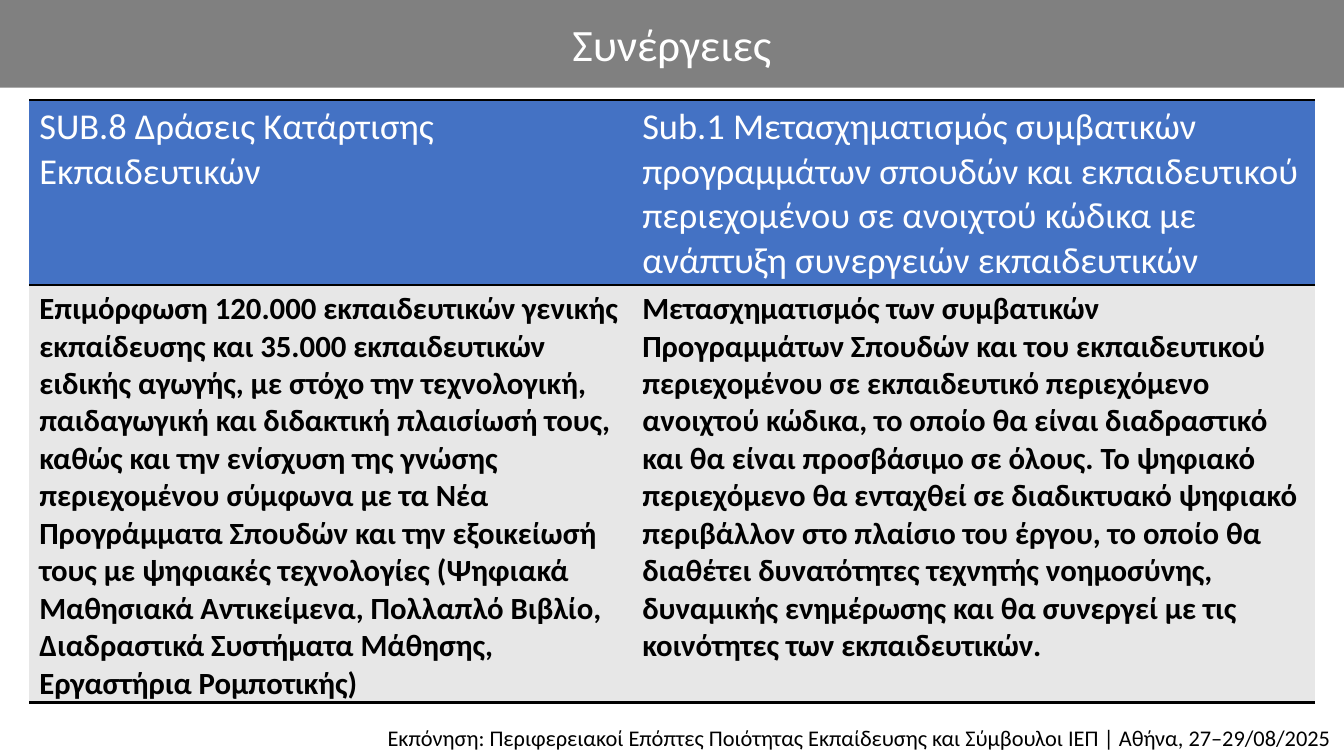
from lxml import etree
from pptx import Presentation
from pptx.dml.color import RGBColor
from pptx.enum.text import MSO_ANCHOR, MSO_AUTO_SIZE, PP_ALIGN
from pptx.oxml.ns import qn
from pptx.util import Inches, Pt

MIDDLE, TOP = MSO_ANCHOR.MIDDLE, MSO_ANCHOR.TOP
CENTER, LEFT, RIGHT = PP_ALIGN.CENTER, PP_ALIGN.LEFT, PP_ALIGN.RIGHT
FIXED = MSO_AUTO_SIZE.NONE
FONT = "Calibri"
COLORS = {
    "band": "808080",
    "header": "4472C4",
    "body": "E7E7E7",
    "white": "FFFFFF",
    "black": "000000",
}


def write(frame, text, size, color, align, bold=False):
    frame.text = text
    frame.word_wrap = True
    para = frame.paragraphs[0]
    para.alignment = align
    for span in para.runs:
        span.font.name = FONT
        span.font.size = Pt(size)
        span.font.bold = bold
        span.font.color.rgb = RGBColor.from_string(COLORS[color])


def set_border(cell, side, points):
    line = etree.Element(qn(f"a:{side}"), w=str(Pt(points)))
    if points:
        fill = etree.SubElement(line, qn("a:solidFill"))
        etree.SubElement(fill, qn("a:srgbClr"), val=COLORS["black"])
    else:
        etree.SubElement(line, qn("a:noFill"))
    properties = cell._tc.get_or_add_tcPr()
    fill_index = next(i for i, item in enumerate(properties) if item.tag == qn("a:solidFill"))
    properties.insert(fill_index, line)


deck = Presentation()
deck.slide_width = Inches(13.33)
deck.slide_height = Inches(7.5)
page = deck.slides.add_slide(deck.slide_layouts[5])

title = page.shapes.title
title.left, title.top = Inches(0), Inches(0)
title.width, title.height = deck.slide_width, Inches(0.87)
title.fill.solid()
title.fill.fore_color.rgb = RGBColor.from_string(COLORS["band"])
write(title.text_frame, "Συνέργειες", 32, "white", CENTER)
title.text_frame.auto_size = FIXED
title.text_frame.vertical_anchor = MIDDLE

synergies = [
    (
        "SUB.8 Δράσεις Κατάρτισης Εκπαιδευτικών",
        "Sub.1 Μετασχηματισμός συμβατικών προγραμμάτων σπουδών και εκπαιδευτικού "
        "περιεχομένου σε ανοιχτού κώδικα με ανάπτυξη συνεργειών εκπαιδευτικών",
    ),
    (
        "Επιμόρφωση 120.000 εκπαιδευτικών γενικής εκπαίδευσης και 35.000 εκπαιδευτικών "
        "ειδικής αγωγής, με στόχο την τεχνολογική, παιδαγωγική και διδακτική πλαισίωσή "
        "τους, καθώς και την ενίσχυση της γνώσης περιεχομένου σύμφωνα με τα Νέα "
        "Προγράμματα Σπουδών και την εξοικείωσή τους με ψηφιακές τεχνολογίες (Ψηφιακά "
        "Μαθησιακά Αντικείμενα, Πολλαπλό Βιβλίο, Διαδραστικά Συστήματα Μάθησης, "
        "Εργαστήρια Ρομποτικής)",
        "Μετασχηματισμός των συμβατικών Προγραμμάτων Σπουδών και του εκπαιδευτικού "
        "περιεχομένου σε εκπαιδευτικό περιεχόμενο ανοιχτού κώδικα, το οποίο θα είναι "
        "διαδραστικό και θα είναι προσβάσιμο σε όλους. Το ψηφιακό περιεχόμενο θα "
        "ενταχθεί σε διαδικτυακό ψηφιακό περιβάλλον στο πλαίσιο του έργου, το οποίο θα "
        "διαθέτει δυνατότητες τεχνητής νοημοσύνης, δυναμικής ενημέρωσης και θα "
        "συνεργεί με τις κοινότητες των εκπαιδευτικών.",
    ),
]
row_styles = [
    {"height": 1.84, "fill": "header", "size": 26, "color": "white", "bold": False},
    {"height": 4.13, "fill": "body", "size": 22, "color": "black", "bold": True},
]
table = page.shapes.add_table(
    2, 2, Inches(0.29), Inches(0.99), Inches(12.75), Inches(5.97)
).table
for column, width in zip(table.columns, (5.98, 6.77)):
    column.width = Inches(width)
for row, style, texts in zip(table.rows, row_styles, synergies):
    row.height = Inches(style["height"])
    for cell, text in zip(row.cells, texts):
        cell.margin_bottom = Inches(0)
        cell.fill.solid()
        cell.fill.fore_color.rgb = RGBColor.from_string(COLORS[style["fill"]])
        write(cell.text_frame, text, style["size"], style["color"], LEFT, style["bold"])
        for side, points in (("lnL", 0), ("lnR", 0), ("lnT", 2), ("lnB", 2)):
            set_border(cell, side, points)

footer = page.shapes.add_textbox(Inches(0.03), Inches(7.11), Inches(13.27), Inches(0.39))
footer.fill.solid()
footer.fill.fore_color.rgb = RGBColor.from_string(COLORS["white"])
write(
    footer.text_frame,
    "Εκπόνηση: Περιφερειακοί Επόπτες Ποιότητας Εκπαίδευσης και Σύμβουλοι ΙΕΠ | "
    "Αθήνα, 27–29/08/2025",
    16, "black", RIGHT,
)
footer.text_frame.vertical_anchor = TOP
footer.text_frame.paragraphs[0].line_spacing = 1.1

deck.save("out.pptx")
